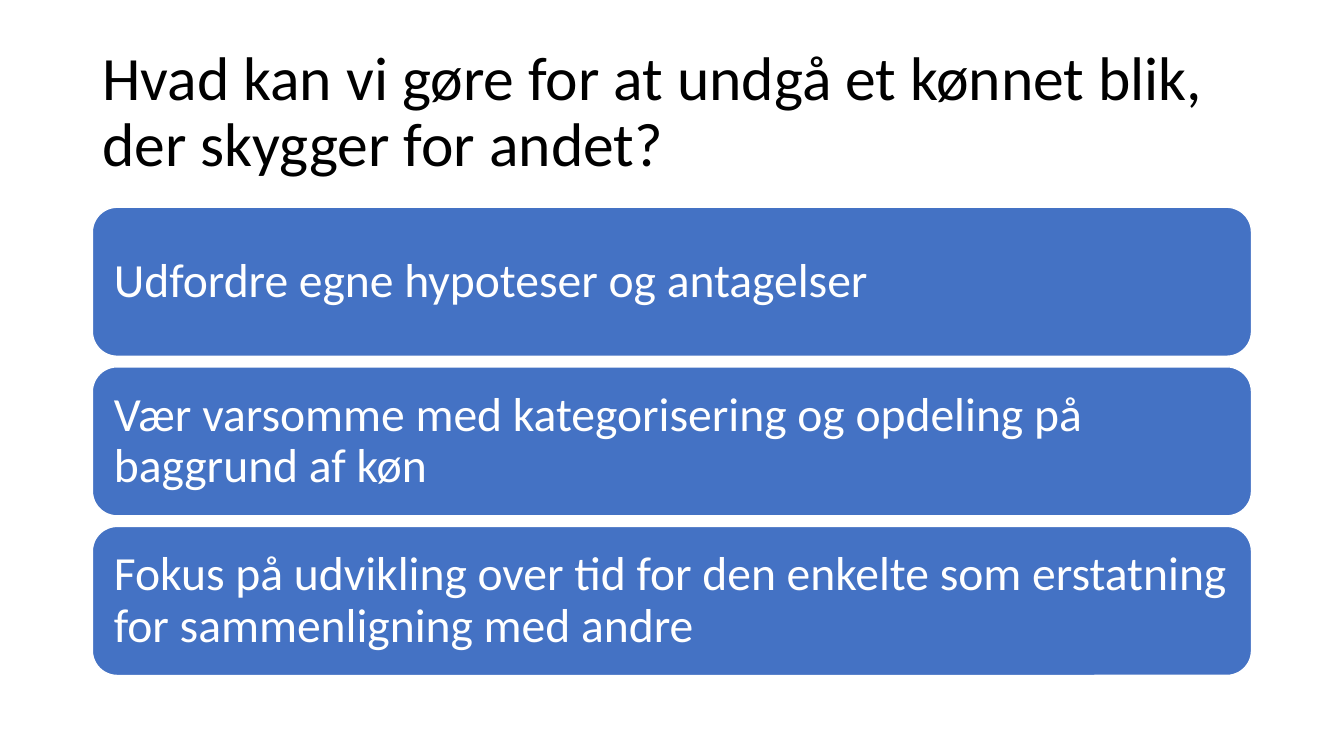
from pptx import Presentation
from pptx.dml.color import RGBColor
from pptx.enum.shapes import MSO_SHAPE
from pptx.enum.text import MSO_ANCHOR, MSO_AUTO_SIZE, PP_ALIGN
from pptx.util import Pt

# Content
TITLE = "Hvad kan vi gøre for at undgå et kønnet blik, der skygger for andet?"
ADVICE = [
    "Udfordre egne hypoteser og antagelser",
    "Vær varsomme med kategorisering og opdeling på baggrund af køn",
    "Fokus på udvikling over tid for den enkelte som erstatning for sammenligning med andre",
]

# Layout in points
LEFT, WIDTH = 66, 828
TITLE_TOP, TITLE_HEIGHT = 28.75, 104.4
BAR_TOP, BAR_HEIGHT, BAR_GAP = 148, 106.5, 7.5

# Formats
TITLE_FORMAT = {"size": 44, "color": "000000", "inset_x": 7.2, "inset_y": 3.6}
BAR_FORMAT = {"size": 34, "color": "FFFFFF", "inset_x": 10.2, "inset_y": 10.2}


def color(hex_string):
    return RGBColor.from_string(hex_string)


def place(shape, top, height):
    box = {"left": LEFT, "top": top, "width": WIDTH, "height": height}
    for name, value in box.items():
        setattr(shape, name, Pt(value))


def write(shape, text, style):
    frame = shape.text_frame
    frame.text = text
    frame_format = {
        "word_wrap": True,
        "auto_size": MSO_AUTO_SIZE.NONE,
        "vertical_anchor": MSO_ANCHOR.MIDDLE,
        "margin_left": Pt(style["inset_x"]),
        "margin_right": Pt(style["inset_x"]),
        "margin_top": Pt(style["inset_y"]),
        "margin_bottom": Pt(style["inset_y"]),
    }
    for name, value in frame_format.items():
        setattr(frame, name, value)
    paragraph = frame.paragraphs[0]
    paragraph.alignment = PP_ALIGN.LEFT
    paragraph.line_spacing = 0.9
    font = paragraph.runs[0].font
    for name, value in {"name": "Calibri", "size": Pt(style["size"])}.items():
        setattr(font, name, value)
    font.color.rgb = color(style["color"])


def add_bar(slide, index, text):
    top = BAR_TOP + index * (BAR_HEIGHT + BAR_GAP)
    bar = slide.shapes.add_shape(MSO_SHAPE.ROUNDED_RECTANGLE, 0, 0, 0, 0)
    place(bar, top, BAR_HEIGHT)
    bar.shadow.inherit = False
    bar.fill.solid()
    bar.fill.fore_color.rgb = color("4472C4")
    bar.line.color.rgb = color("FFFFFF")
    bar.line.width = Pt(1)
    write(bar, text, BAR_FORMAT)


def main():
    presentation = Presentation()
    presentation.slide_width, presentation.slide_height = Pt(960), Pt(540)
    slide = presentation.slides.add_slide(presentation.slide_layouts[5])

    # Title
    title = slide.shapes.title
    place(title, TITLE_TOP, TITLE_HEIGHT)
    write(title, TITLE, TITLE_FORMAT)

    # Stacked bars of advice
    for index, text in enumerate(ADVICE):
        add_bar(slide, index, text)

    presentation.save("out.pptx")


if __name__ == "__main__":
    main()
